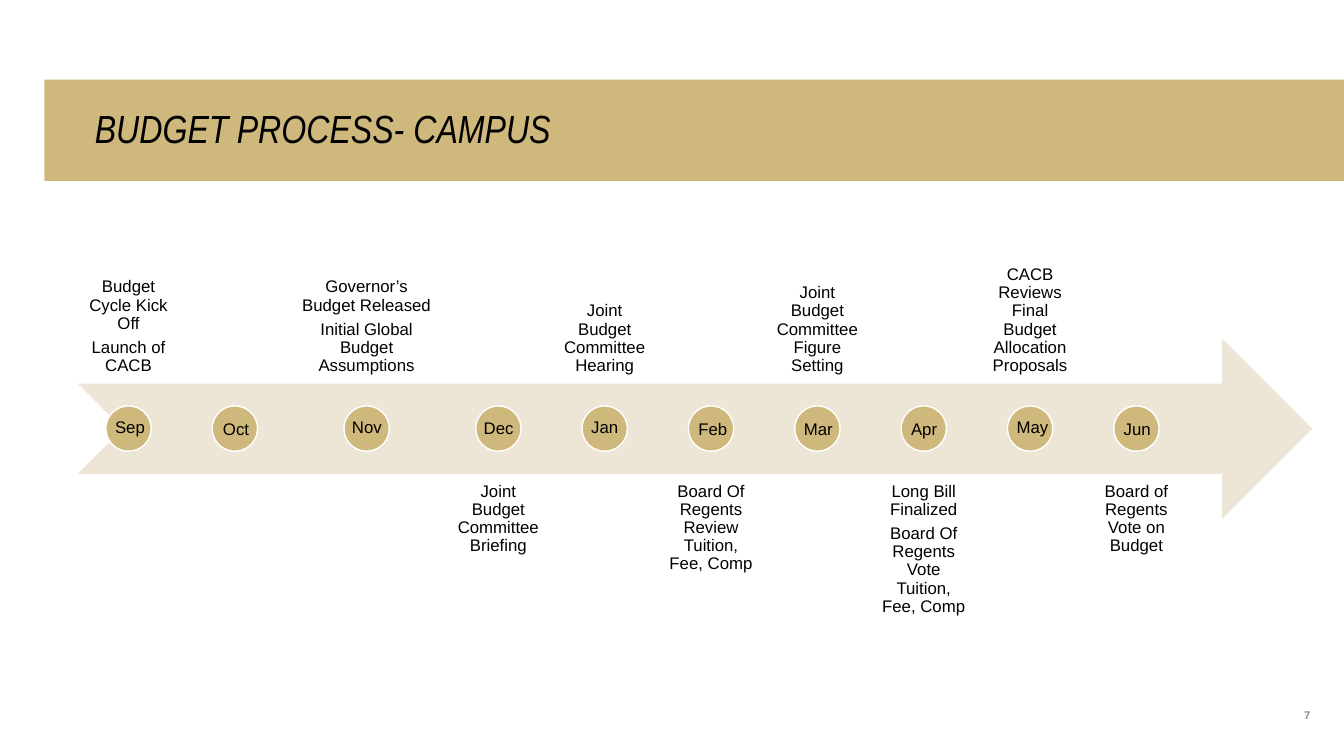
from pptx import Presentation
from pptx.dml.color import RGBColor
from pptx.enum.shapes import MSO_SHAPE
from pptx.enum.text import MSO_ANCHOR, PP_ALIGN
from pptx.util import Cm, Pt

GOLD = RGBColor(0xCF, 0xB8, 0x7C)
SAND = RGBColor(0xED, 0xE6, 0xD7)
WHITE = RGBColor(0xFF, 0xFF, 0xFF)
BLACK = RGBColor(0, 0, 0)
GRAY = RGBColor(0x8C, 0x8C, 0x8C)

BAND = MSO_SHAPE.RECTANGLE
ARROW = MSO_SHAPE.NOTCHED_RIGHT_ARROW
DISC = MSO_SHAPE.OVAL
TOP, MIDDLE, BOTTOM = MSO_ANCHOR.TOP, MSO_ANCHOR.MIDDLE, MSO_ANCHOR.BOTTOM
LEFT, CENTER, RIGHT = PP_ALIGN.LEFT, PP_ALIGN.CENTER, PP_ALIGN.RIGHT

START, GAP = 1.96, 0.12
NARROW, WIDE = 2.56, 3.84
DOT, DOT_TOP = 1.14, 10.23
ABOVE, BELOW, TALL = 5.13, 11.94, 4.55

# month, column width, name shift from the disc, name top, side, events
MONTHS = [
    ("Sep", NARROW, -0.02, 10.36, ABOVE, ["Budget Cycle Kick Off", "Launch of CACB"]),
    ("Oct", NARROW, 0.02, 10.41, BELOW, []),
    ("Nov", WIDE, -0.05, 10.36, ABOVE,
     ["Governor’s Budget Released", "Initial Global Budget Assumptions"]),
    ("Dec", NARROW, -0.05, 10.39, BELOW, ["Joint Budget Committee Briefing"]),
    ("Jan", NARROW, -0.02, 10.36, ABOVE, ["Joint Budget Committee Hearing"]),
    ("Feb", NARROW, 0, 10.41, BELOW, ["Board Of Regents Review Tuition, Fee, Comp"]),
    ("Mar", NARROW, -0.02, 10.41, ABOVE, ["Joint Budget Committee Figure Setting"]),
    ("Apr", NARROW, 0, 10.41, BELOW,
     ["Long Bill Finalized", "Board Of Regents Vote Tuition, Fee, Comp"]),
    ("May", NARROW, -0.02, 10.36, ABOVE,
     ["CACB Reviews Final Budget Allocation Proposals"]),
    ("Jun", NARROW, 0, 10.41, BELOW, ["Board of Regents Vote on Budget"]),
]


class Board:
    """Draws on one slide; every box is (left, top, width, height) in cm."""

    def __init__(self, slide):
        self.slide = slide
        self.font = {"name": "Arial", "size": Pt(12)}

    def shape(self, kind, box, fill, edge=None):
        item = self.slide.shapes.add_shape(kind, *map(Cm, box))
        item.shadow.inherit = False
        item.fill.solid()
        item.fill.fore_color.rgb = fill
        if edge is None:
            item.line.fill.background()
        else:
            item.line.color.rgb = edge
            item.line.width = Pt(1)
        return item

    def text(self, box, lines, **style):
        item = self.slide.shapes.add_textbox(*map(Cm, box))
        self.label(item, lines, **style)

    def label(self, item, lines, pad=(0.25, 0.13, 0.25, 0.13), anchor=TOP,
              align=LEFT, lead=1.0, color=BLACK, **font):
        """Fill an item with paragraphs; pad runs left, top, right, bottom in cm."""
        frame = item.text_frame
        frame.word_wrap = True
        frame.vertical_anchor = anchor
        for side, size in zip(("left", "top", "right", "bottom"), pad):
            setattr(frame, "margin_" + side, Cm(size))
        for i, line in enumerate(lines):
            par = frame.add_paragraph() if i else frame.paragraphs[0]
            par.alignment = align
            par.line_spacing = lead
            if i:
                par.space_before = Pt(4.2)
            run = par.add_run()
            run.text = line
            for key, value in {**self.font, **font}.items():
                setattr(run.font, key, value)
            run.font.color.rgb = color


def main():
    deck = Presentation()
    deck.slide_width, deck.slide_height = Cm(33.87), Cm(19.05)
    board = Board(deck.slides.add_slide(deck.slide_layouts[6]))

    band = board.shape(BAND, (1.12, 2.01, 32.75, 2.55), GOLD)
    board.label(band, ["BUDGET PROCESS- CAMPUS"], pad=(1.27, 0.13, 2.54, 0.13),
                anchor=MIDDLE, lead=0.9, name="Arial Narrow", size=Pt(28), italic=True)
    board.shape(ARROW, (START, 8.53, 31.11, TALL), SAND)

    left = START
    for month, width, shift, top, side, events in MONTHS:
        dot = left + (width - DOT) / 2
        board.shape(DISC, (dot, DOT_TOP, DOT, DOT), GOLD, WHITE)
        board.text((dot + shift, top, 1.47, 0.77), [month])
        if events:
            board.text((left, side, width, TALL), events, pad=(0.23,) * 4,
                       anchor=BOTTOM if side == ABOVE else TOP, align=CENTER, lead=0.9)
        left += width + GAP

    board.text((30.86, 16.92, 2.16, 1.27), ["7"], pad=(0,) * 4, anchor=BOTTOM,
               align=RIGHT, color=GRAY, size=Pt(8), bold=True)
    deck.save("out.pptx")


if __name__ == "__main__":
    main()
